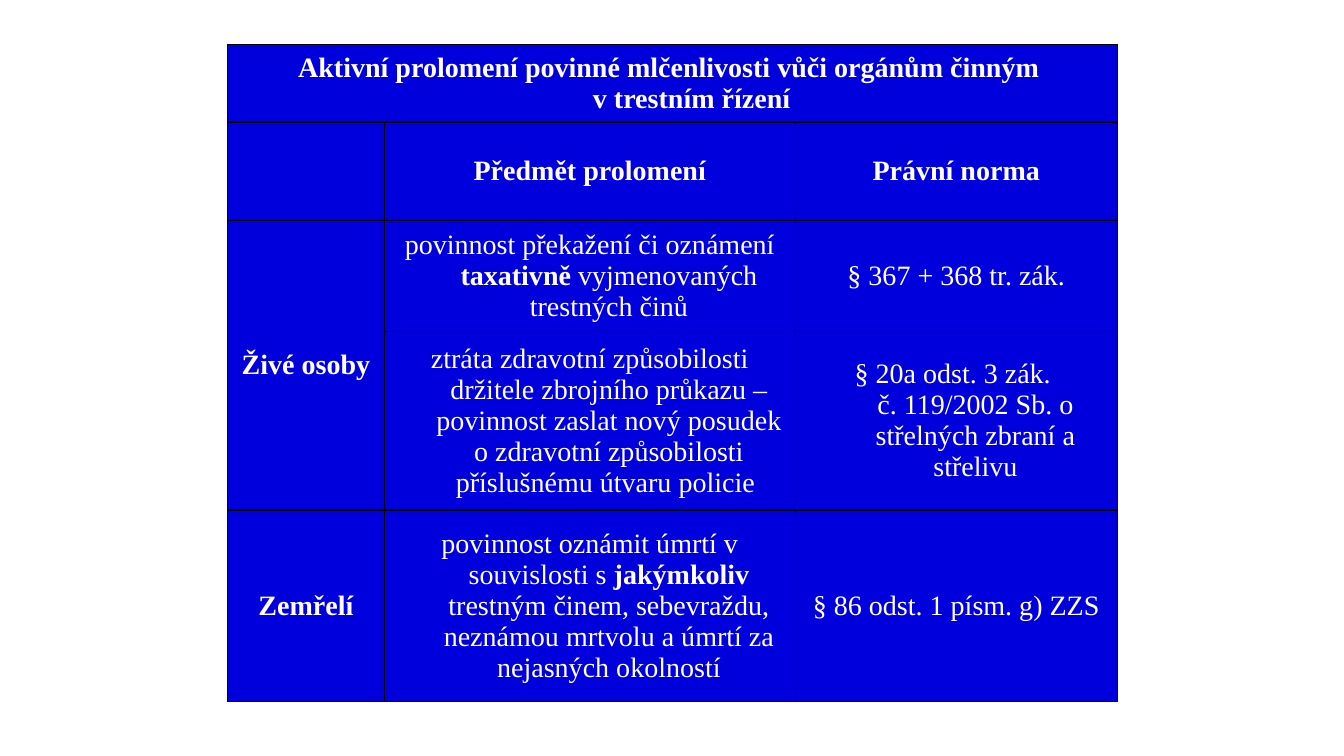
from dataclasses import dataclass

from lxml.etree import SubElement
from pptx import Presentation
from pptx.dml.color import RGBColor
from pptx.enum.text import MSO_ANCHOR, PP_ALIGN
from pptx.oxml import parse_xml
from pptx.oxml.ns import nsdecls, qn
from pptx.util import Inches, Pt


@dataclass(frozen=True)
class Theme:
    font: str = "Times New Roman"
    size: int = 20
    text: str = "FFFFFF"
    fill: str = "0000DC"
    border: str = "000000"
    border_width: int = 1
    hanging: float = 0.38


THEME = Theme()
COLUMNS = [1.55, 4.08, 3.19]
ROWS = [0.77, 0.98, 1.1, 1.77, 1.9]
MERGES = [((0, 0), (0, 2)), ((2, 0), (3, 0))]

# Text between ** marks is bold.
CELLS = {
    (0, 0): "**Aktivní prolomení povinné mlčenlivosti vůči orgánům činným \nv trestním řízení**",
    (1, 1): "**Předmět prolomení**",
    (1, 2): "**Právní norma**",
    (2, 0): "**Živé osoby**",
    (2, 1): "povinnost překažení či oznámení **taxativně** vyjmenovaných trestných činů",
    (2, 2): "§ 367 + 368 tr. zák.",
    (3, 1): "ztráta zdravotní způsobilosti držitele zbrojního průkazu – povinnost zaslat "
            "nový posudek o zdravotní způsobilosti příslušnému útvaru policie ",
    (3, 2): "§ 20a odst. 3 zák. \nč. 119/2002 Sb. o střelných zbraní a střelivu",
    (4, 0): "**Zemřelí**",
    (4, 1): "povinnost oznámit úmrtí v souvislosti s **jakýmkoliv** trestným činem, "
            "sebevraždu, neznámou mrtvolu a úmrtí za nejasných okolností",
    (4, 2): "§ 86 odst. 1 písm. g) ZZS",
}


def write_text(tf, text, *, size, font, color, hanging, align=PP_ALIGN.CENTER):
    p = tf.paragraphs[0]
    p.alignment = align
    pPr = p._p.get_or_add_pPr()
    pPr.set("marL", str(Inches(hanging)))
    pPr.set("indent", str(-Inches(hanging)))
    for i, part in enumerate(text.split("**")):
        for j, line in enumerate(part.split("\n")):
            if j:
                p.add_line_break()
            if line:
                r = p.add_run()
                r.text = line
                r.font.name = font
                r.font.size = Pt(size)
                r.font.bold = i % 2 == 1
                r.font.color.rgb = RGBColor.from_string(color)


def style_cell(cell, theme):
    cell.fill.solid()
    cell.fill.fore_color.rgb = RGBColor.from_string(theme.fill)
    cell.vertical_anchor = MSO_ANCHOR.MIDDLE
    tcPr = cell._tc.get_or_add_tcPr()
    for i, side in enumerate("LRTB"):
        ln = parse_xml(f'<a:ln{side} {nsdecls("a")} w="{Pt(theme.border_width)}"/>')
        line_fill = SubElement(ln, qn("a:solidFill"))
        SubElement(line_fill, qn("a:srgbClr")).set("val", theme.border)
        tcPr.insert(i, ln)


def disclosure_table(s, left, top, theme):
    frame = s.shapes.add_table(len(ROWS), len(COLUMNS), Inches(left), Inches(top),
                               Inches(sum(COLUMNS)), Inches(sum(ROWS)))
    table = frame.table
    table.first_row = table.horz_banding = False
    for column, width in zip(table.columns, COLUMNS):
        column.width = Inches(width)
    for row, height in zip(table.rows, ROWS):
        row.height = Inches(height)
    for first, last in MERGES:
        table.cell(*first).merge(table.cell(*last))
    for cell in table.iter_cells():
        style_cell(cell, theme)
    for place, text in CELLS.items():
        write_text(table.cell(*place).text_frame, text, size=theme.size,
                   font=theme.font, color=theme.text, hanging=theme.hanging)


def main():
    prs = Presentation()
    prs.slide_width, prs.slide_height = Inches(13.33), Inches(7.5)
    s = prs.slides.add_slide(prs.slide_layouts[6])
    disclosure_table(s, 2.26, 0.44, THEME)
    prs.save("out.pptx")


if __name__ == "__main__":
    main()
